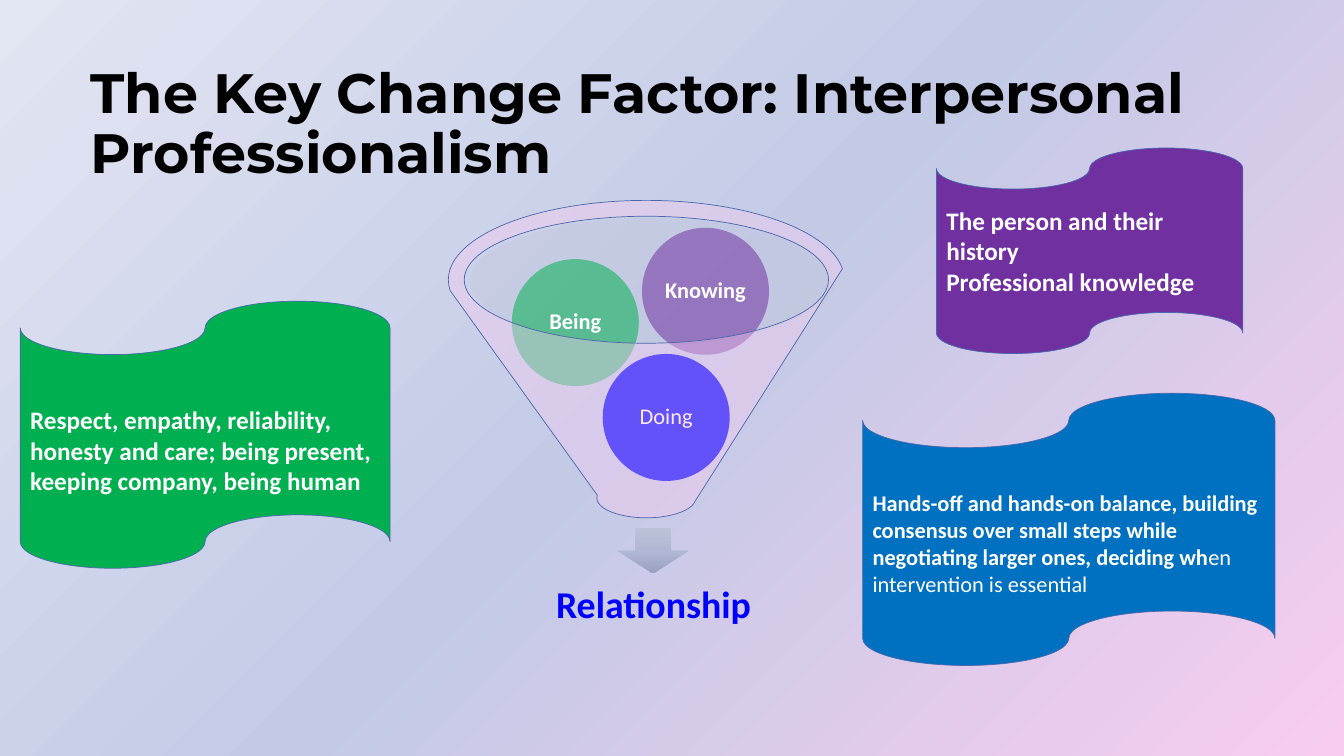
from pptx import Presentation
from pptx.dml.color import RGBColor
from pptx.enum.shapes import MSO_SHAPE as Kind
from pptx.enum.text import MSO_ANCHOR as Anchor, PP_ALIGN as Align
from pptx.oxml import parse_xml
from pptx.oxml.ns import nsdecls, qn
from pptx.util import Cm, Pt
from lxml.etree import SubElement

WHITE, EDGE, PINK = "FFFFFF", "4A66AC", "F8CCF0"
PURPLE, GREEN, BLUE = "7030A0", "00B050", "0070C0"


def hue(code):
    return RGBColor.from_string(code)


def blend(stops, way):
    marks = "".join(
        f'<a:gs pos="{pos * 1000}"><a:srgbClr val="{code}"/></a:gs>'
        for pos, code in stops)
    return f'<a:gradFill {nsdecls("a")} rotWithShape="1"><a:gsLst>{marks}</a:gsLst>{way}</a:gradFill>'


def paint(slide):
    way = ('<a:path path="circle"><a:fillToRect l="100000" t="100000"/></a:path>'
           '<a:tileRect r="-100000" b="-100000"/>')
    fill = blend([(0, PINK), (50, "C3CAE6"), (100, "E2E5F2")], way)
    slide.element.cSld.insert(0, parse_xml(
        f'<p:bg {nsdecls("p")}><p:bgPr>{fill}<a:effectLst {nsdecls("a")}/></p:bgPr></p:bg>'))


def shape(slide, kind, box, fill, edge=None, alpha=None):
    item = slide.shapes.add_shape(kind, *map(Cm, box))
    item.shadow.inherit = False
    item.fill.solid()
    item.fill.fore_color.rgb = hue(fill)
    if alpha:
        tint = item.element.spPr.find(qn("a:solidFill"))[0]
        SubElement(tint, qn("a:alpha"), val=str(alpha * 1000))
    if edge:
        item.line.color.rgb = hue(edge)
        item.line.width = Pt(0.5)
    else:
        item.line.fill.background()
    return item


def write(item, lines, size, color=WHITE, font="Calibri", align=Align.LEFT, space=1.0):
    frame = item.text_frame
    frame.word_wrap = True
    frame.vertical_anchor = Anchor.MIDDLE
    for i, runs in enumerate(lines):
        para = frame.paragraphs[0] if i == 0 else frame.add_paragraph()
        para.alignment = align
        para.line_spacing = space
        for text, bold in runs:
            run = para.add_run()
            run.text = text
            run.font.size = Pt(size)
            run.font.bold = bold
            run.font.name = font
            run.font.color.rgb = hue(color)
    return frame


def title(slide, box):
    item = slide.shapes.add_textbox(*map(Cm, box))
    write(item, [[("The Key Change Factor: Interpersonal Professionalism", True)]],
          39.6, "000000", "Montserrat", space=0.9)


def funnel(slide, box):
    left, top, width, height = box

    def at(x, y, w, h):
        return left + x, top + y, w, h

    shape(slide, Kind.OVAL, at(0.54, 0.44, 9.22, 3.2), "C1C6DB", alpha=40)

    arrow = shape(slide, Kind.DOWN_ARROW, at(4.27, 8.26, 1.78, 1.14), "B0B7D4")
    old = arrow.element.spPr.find(qn("a:solidFill"))
    shades = [(0, "BBC1D8"), (50, "B0B7D4"), (100, "9AA1BF")]
    arrow.element.spPr.replace(old, parse_xml(blend(shades, '<a:lin ang="5400000" scaled="0"/>')))

    label = slide.shapes.add_textbox(*map(Cm, at(0.89, 9.17, 8.56, 2.13)))
    write(label, [[("Relationship", True)]], 27, "0000FF", align=Align.CENTER, space=0.9)

    for word, x, y, fill, alpha, bold in [
            ("Doing", 3.89, 3.87, "0000FF", None, False),
            ("Being", 1.6, 1.48, GREEN, 54, True),
            ("Knowing", 4.88, 0.69, PURPLE, 54, True)]:
        ball = shape(slide, Kind.OVAL, at(x, y, 3.2, 3.2), fill, alpha=alpha)
        frame = write(ball, [[(word, bold)]], 16, align=Align.CENTER, space=0.9)
        frame.margin_left = frame.margin_right = Cm(0.05)
        frame.margin_top = frame.margin_bottom = Cm(0.05)

    shape(slide, Kind.FUNNEL, box, PINK, EDGE, 40)


def tape(slide, box, fill, lines, size, drop=0):
    item = shape(slide, Kind.FLOWCHART_PUNCHED_TAPE, box, fill, EDGE)
    frame = write(item, lines, size)
    frame.margin_top = Cm(0.13 + drop)


def main():
    deck = Presentation()
    deck.slide_width, deck.slide_height = Cm(33.87), Cm(19.05)
    slide = deck.slides.add_slide(deck.slide_layouts[6])
    paint(slide)
    title(slide, (2.03, 1.8, 29.79, 2.72))
    funnel(slide, (11.3, 5.05, 9.98, 8))
    tape(slide, (23.6, 3.73, 7.72, 5.18), PURPLE,
         [[("The person and their history", True)], [("Professional knowledge", True)]], 18)
    tape(slide, (0.51, 7.59, 9.32, 6.73), GREEN,
         [[("Respect, empathy, reliability, honesty and care; being present, "
            "keeping company, being human", True)]], 18, 0.77)
    tape(slide, (21.74, 9.91, 10.39, 6.86), BLUE,
         [[("Hands-off and hands-on balance, building consensus over small steps "
            "while negotiating larger ones, deciding wh", True),
           ("en intervention is essential", False)]], 16, 0.69)
    deck.save("out.pptx")


if __name__ == "__main__":
    main()
